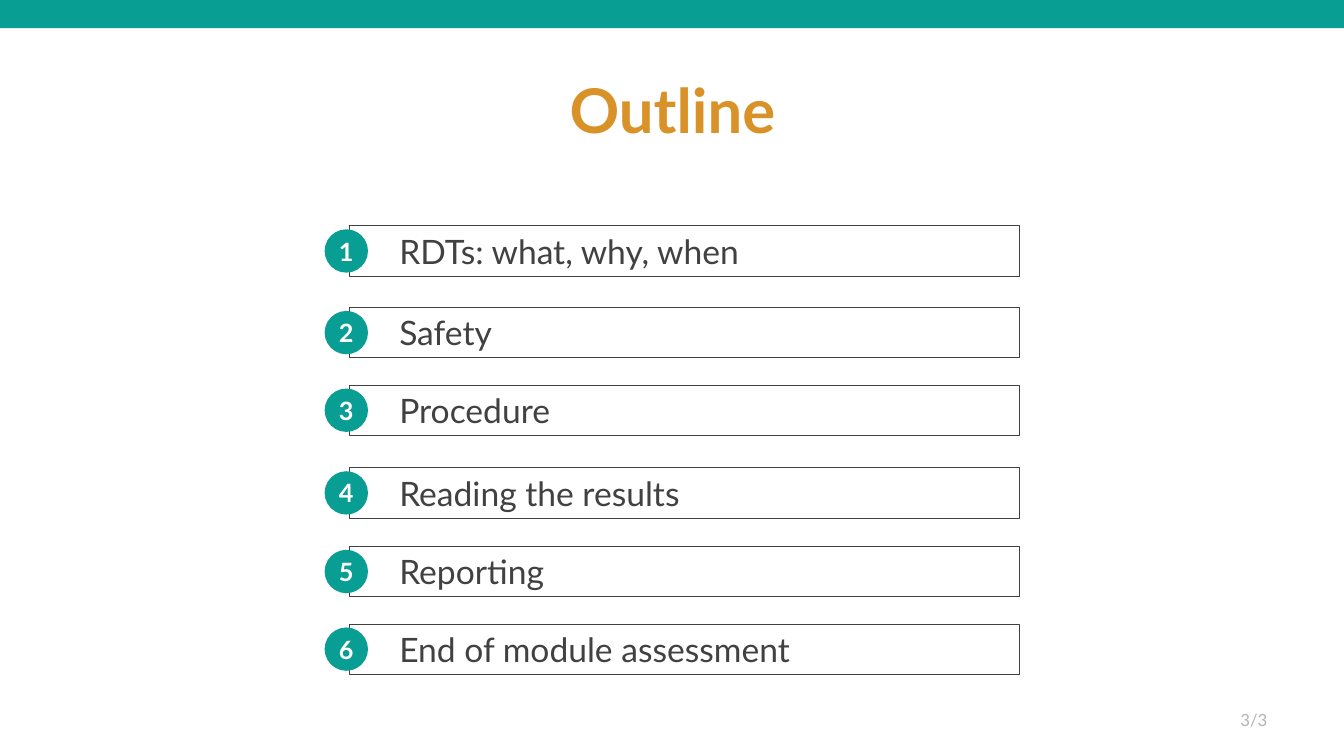
from pptx import Presentation, util as u
from pptx.dml.color import RGBColor
from pptx.enum import shapes, text

FONT = "Lato"
HUES = {"teal": "099E93", "gold": "D99228", "ink": "414141",
        "white": "FFFFFF", "grey": "B3B3B3"}
WIDE, HIGH = 13.33, 7.5
TOPICS = [("RDTs: what, why, when", 2.24), ("Safety", 3.05),
          ("Procedure", 3.82), ("Reading the results", 4.64),
          ("Reporting", 5.42), ("End of module assessment", 6.19)]
KIND, ALIGN = shapes.MSO_SHAPE, text.PP_ALIGN


def hue(name):
    """Return the named colour."""
    return RGBColor.from_string(HUES[name])


def place(shape, box):
    """Move a shape to a box of left, top, width and height in inches."""
    shape.left, shape.top, shape.width, shape.height = map(u.Inches, box)


def write(shape, words, size, tint, align, bold=False, space=None,
          anchor=text.MSO_ANCHOR.MIDDLE):
    """Put one styled paragraph into a shape."""
    frame = shape.text_frame
    frame.word_wrap = True
    frame.auto_size = text.MSO_AUTO_SIZE.NONE
    frame.vertical_anchor = anchor
    frame.text = words
    para = frame.paragraphs[0]
    para.alignment, para.line_spacing = align, space
    font = para.font
    font.name, font.size, font.bold = FONT, u.Pt(size), bold
    font.color.rgb = hue(tint)


def draw(parent, kind, box, fill=None, line=None):
    """Add a flat preset shape with an optional fill and outline."""
    shape = parent.add_shape(kind, *map(u.Inches, box))
    shape.shadow.inherit = False
    if fill:
        shape.fill.solid()
        shape.fill.fore_color.rgb = hue(fill)
    else:
        shape.fill.background()
    if line:
        shape.line.color.rgb = hue(line)
        shape.line.width = u.Pt(0.5)
    else:
        shape.line.fill.background()
    return shape


def header(slide, box):
    """Draw the top band and the title under it."""
    left, top, width, height = box
    draw(slide.shapes, KIND.RECTANGLE, (left, top, width, 0.28), "teal")
    title = slide.shapes.title
    place(title, (left + 0.92, top + 0.4, width - 1.83, height - 0.4))
    write(title, "Outline", 44, "gold", ALIGN.CENTER, True, 0.9)


def topic(slide, box, number, words):
    """Draw a framed topic with its numbered disc on the left edge."""
    left, top, width, height = box
    disc = 0.43
    parts = slide.shapes.add_group_shape().shapes
    frame = draw(parts, KIND.RECTANGLE,
                 (left + 0.25, top, width - 0.25, height), line="ink")
    write(frame, words, 24, "ink", ALIGN.LEFT, anchor=text.MSO_ANCHOR.TOP)
    frame.text_frame.margin_left = u.Inches(0.49)
    badge = draw(parts, KIND.OVAL,
                 (left, top + (height - disc) / 2, disc, disc), "teal")
    write(badge, str(number), 18, "white", ALIGN.CENTER, True)
    inner = badge.text_frame
    inner.margin_left = inner.margin_right = 0
    inner.margin_top = inner.margin_bottom = 0


def footer(slide, box):
    """Write the page count at the right of its box."""
    label = slide.shapes.add_textbox(*map(u.Inches, box))
    write(label, "3/3", 12, "grey", ALIGN.RIGHT, space=0.9)


def main():
    """Build and save the outline slide."""
    deck = Presentation()
    deck.slide_width, deck.slide_height = u.Inches(WIDE), u.Inches(HIGH)
    slide = deck.slides.add_slide(deck.slide_layouts[5])
    header(slide, (0, 0, WIDE, 1.85))
    for number, (words, top) in enumerate(TOPICS, 1):
        topic(slide, (3.22, top, 6.89, 0.5), number, words)
    footer(slide, (9.67, 6.95, 3, 0.4))
    deck.save("out.pptx")


if __name__ == "__main__":
    main()
